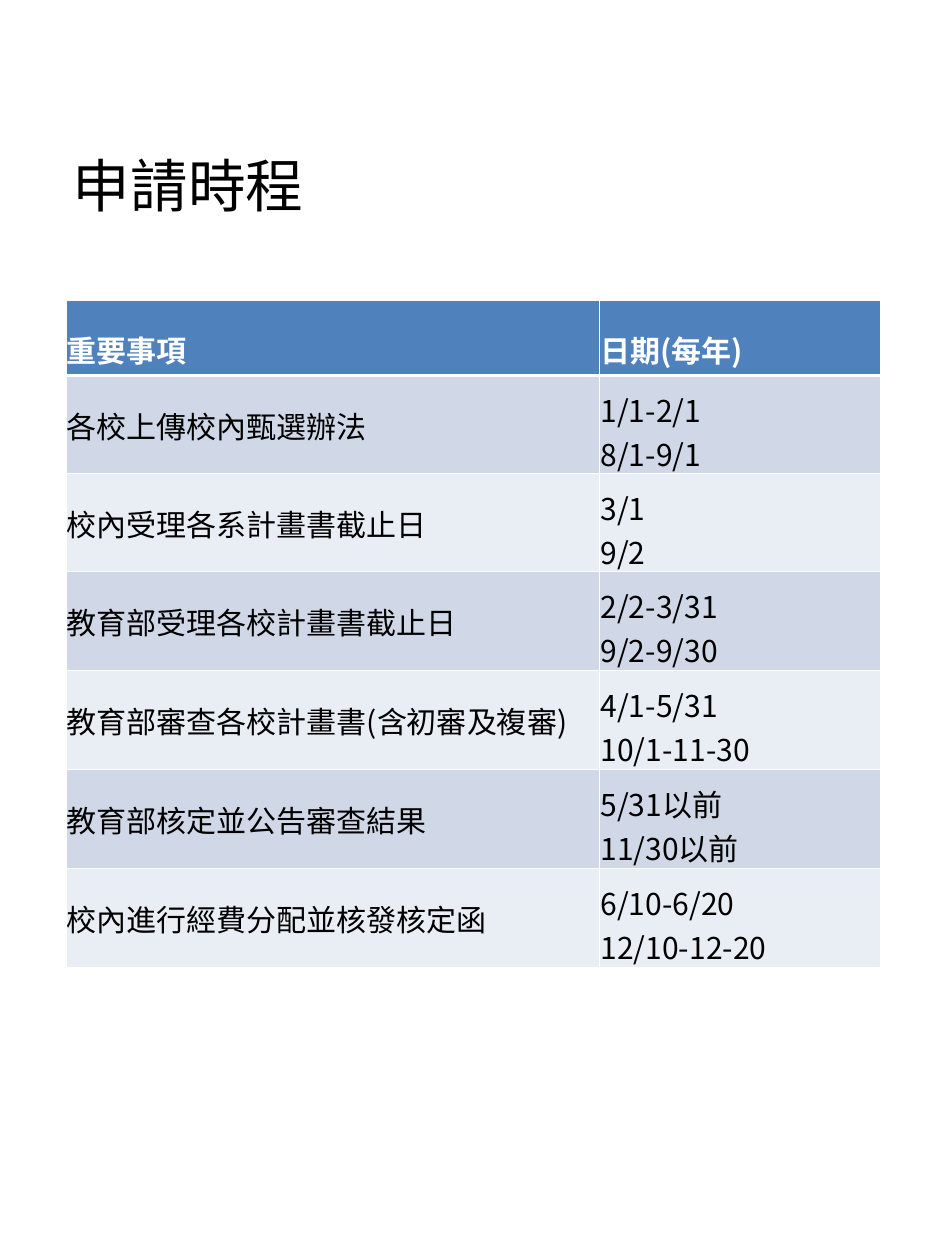
"""Build the slide of yearly application dates."""
from lxml.etree import SubElement
from pptx import Presentation
from pptx.dml.color import RGBColor
from pptx.enum.text import MSO_ANCHOR, MSO_AUTO_SIZE, PP_ALIGN
from pptx.oxml.ns import qn
from pptx.util import Pt

HUES = {"head": "4F81BD", "odd": "D0D8E8", "even": "E9EDF4",
        "white": "FFFFFF", "black": "000000"}
FONT = "Noto Sans CJK SC"
ROWS = [
    ("重要事項", ["日期(每年)"]),
    ("各校上傳校內甄選辦法", ["1/1-2/1", "8/1-9/1"]),
    ("校內受理各系計畫書截止日", ["3/1", "9/2"]),
    ("教育部受理各校計畫書截止日", ["2/2-3/31", "9/2-9/30"]),
    ("教育部審查各校計畫書(含初審及複審)", ["4/1-5/31", "10/1-11-30"]),
    ("教育部核定並公告審查結果", ["5/31以前", "11/30以前"]),
    ("校內進行經費分配並核發核定函", ["6/10-6/20", "12/10-12-20"]),
]
HIGH = [60.5, 78.5, 78.5, 79.2, 79.2, 79.2, 79.2]
WIDE = [427, 224.8]


def edge(cell, side, width):
    """Draw one white side of a cell."""
    line = SubElement(cell._tc.get_or_add_tcPr(), qn(f"a:{side}"), w=str(Pt(width)))
    fill = SubElement(line, qn("a:solidFill"))
    SubElement(fill, qn("a:srgbClr"), val=HUES["white"])


def write(para, text, size, font, hue, bold=False):
    """Add one styled run to a paragraph."""
    run = para.add_run()
    run.text = text
    run.font.size = Pt(size)
    run.font.name = font
    run.font.bold = bold
    run.font.color.rgb = RGBColor.from_string(HUES[hue])
    return run


deck = Presentation()
deck.slide_width, deck.slide_height = Pt(756), Pt(1008)
slide = deck.slides.add_slide(deck.slide_layouts[5])

title = slide.shapes.title
title.left, title.top, title.width, title.height = Pt(58.3), Pt(118), Pt(187), Pt(57.6)
frame = title.text_frame
frame.margin_left = frame.margin_right = frame.margin_bottom = 0
frame.margin_top = Pt(1.3)
frame.word_wrap = True
frame.auto_size = MSO_AUTO_SIZE.SHAPE_TO_FIT_TEXT
frame.vertical_anchor = MSO_ANCHOR.MIDDLE
para = frame.paragraphs[0]
para.alignment = PP_ALIGN.LEFT
run = write(para, "申請時程", 46, "Calibri", "black")
run.font._element.set("spc", "20")

table = slide.shapes.add_table(len(ROWS), len(WIDE), Pt(52.8), Pt(240),
                               Pt(sum(WIDE)), Pt(sum(HIGH))).table
for col, width in zip(table.columns, WIDE):
    col.width = Pt(width)
for r, (task, dates) in enumerate(ROWS):
    table.rows[r].height = Pt(HIGH[r])
    band = "head" if r == 0 else "odd" if r % 2 else "even"
    for c, lines in enumerate([[task], dates]):
        cell = table.cell(r, c)
        cell.margin_left = cell.margin_right = Pt(0.7)
        cell.margin_top = Pt(22.3 if len(lines) == 1 else 9.7)
        cell.margin_bottom = 0
        cell.vertical_anchor = MSO_ANCHOR.TOP
        for side in ("lnL", "lnR", "lnT", "lnB"):
            thick = (r, side) in [(0, "lnB"), (1, "lnT")]
            edge(cell, side, 3 if thick else 1)
        cell.fill.solid()
        cell.fill.fore_color.rgb = RGBColor.from_string(HUES[band])
        for n, text in enumerate(lines):
            para = cell.text_frame.add_paragraph() if n else cell.text_frame.paragraphs[0]
            run = write(para, text, 24, FONT, "black" if r else "white", r == 0)
            SubElement(run.font._element, qn("a:ea"), typeface=FONT)

deck.save("out.pptx")
